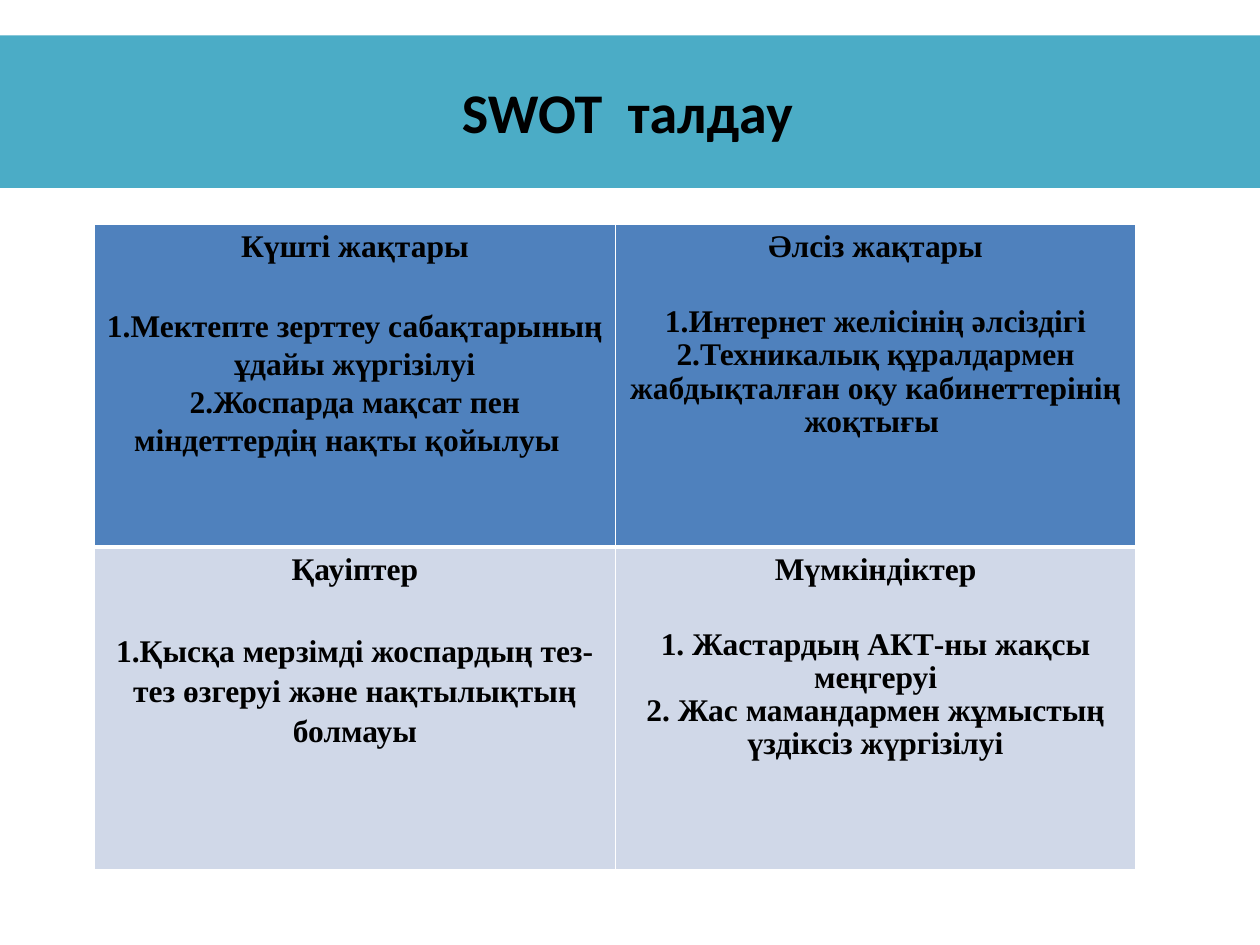
from lxml import etree
from pptx import Presentation
from pptx.dml.color import RGBColor
from pptx.enum.shapes import MSO_SHAPE
from pptx.enum.text import MSO_ANCHOR, PP_ALIGN
from pptx.oxml.ns import qn
from pptx.util import Pt

RECTANGLE = MSO_SHAPE.RECTANGLE
CENTER = PP_ALIGN.CENTER
MIDDLE = MSO_ANCHOR.MIDDLE

COLORS = {
    "banner": "4BACC6",
    "top": "4F81BD",
    "bottom": "D0D8E8",
    "border": "FFFFFF",
    "text": "000000",
}
TITLE_FONT = {"name": "Calibri", "size": Pt(32), "bold": True}
CELL_FONT = {"name": "Times New Roman", "size": Pt(18), "bold": True}
CELL_MARGINS = {
    "margin_left": Pt(5), "margin_right": Pt(5),
    "margin_top": 0, "margin_bottom": 0,
}
HEADING = {"alignment": CENTER, "line_spacing": 1.15, "space_after": Pt(23.8)}

# Each quadrant: heading, line spacing of the points, points
QUADRANTS = [
    [
        ("Күшті жақтары", 1.09, [
            "1.Мектепте зерттеу сабақтарының ұдайы жүргізілуі",
            "2.Жоспарда мақсат пен міндеттердің нақты қойылуы  ",
        ]),
        ("Әлсіз жақтары", 0.95, [
            "1.Интернет желісінің әлсіздігі 2.Техникалық құралдармен "
            "жабдықталған оқу кабинеттерінің жоқтығы ",
        ]),
    ],
    [
        ("Қауіптер", 1.15, [
            "1.Қысқа мерзімді жоспардың тез-тез өзгеруі және "
            "нақтылықтың болмауы",
        ]),
        ("Мүмкіндіктер", 0.95, [
            "1. Жастардың АКТ-ны жақсы меңгеруі",
            "2. Жас мамандармен жұмыстың үздіксіз жүргізілуі",
        ]),
    ],
]
ROW_FILLS = ["top", "bottom"]
ROW_BOTTOM_BORDERS = [3, 1]


def color(key):
    return RGBColor.from_string(COLORS[key])


def apply(target, values):
    for name, value in values.items():
        setattr(target, name, value)


def fill_solid(target, key):
    target.fill.solid()
    target.fill.fore_color.rgb = color(key)


def write(para, text, font, layout):
    apply(para, layout)
    span = para.add_run()
    span.text = text
    apply(span.font, font)
    span.font.color.rgb = color("text")


def add_banner(page, text):
    box = page.shapes.add_shape(RECTANGLE, Pt(-2.9), Pt(20.2), Pt(722.9), Pt(87.1))
    box.shadow.inherit = False
    fill_solid(box, "banner")
    box.line.fill.background()
    box.text_frame.vertical_anchor = MIDDLE
    write(box.text_frame.paragraphs[0], text, TITLE_FONT, {"alignment": CENTER})


def set_borders(cell, bottom):
    properties = cell._tc.get_or_add_tcPr()
    widths = {"a:lnL": 1, "a:lnR": 1, "a:lnT": 1, "a:lnB": bottom}
    for index, (tag, width) in enumerate(widths.items()):
        line = etree.Element(qn(tag), w=str(Pt(width)))
        solid = etree.SubElement(line, qn("a:solidFill"))
        etree.SubElement(solid, qn("a:srgbClr"), val=COLORS["border"])
        properties.insert(index, line)


def fill_cell(cell, heading, spacing, points):
    apply(cell, CELL_MARGINS)
    frame = cell.text_frame
    write(frame.paragraphs[0], heading, CELL_FONT, HEADING)
    for point in points:
        layout = {"alignment": CENTER, "line_spacing": spacing}
        write(frame.add_paragraph(), point, CELL_FONT, layout)


def add_swot_table(page):
    table = page.shapes.add_table(
        2, 2, Pt(54), Pt(128.3), Pt(595.2), Pt(368.6)).table
    apply(table, {"first_row": False, "horz_banding": False})
    for row, quadrants in enumerate(QUADRANTS):
        for column, quadrant in enumerate(quadrants):
            cell = table.cell(row, column)
            fill_cell(cell, *quadrant)
            fill_solid(cell, ROW_FILLS[row])
            set_borders(cell, ROW_BOTTOM_BORDERS[row])


def main():
    deck = Presentation()
    deck.slide_width, deck.slide_height = Pt(720), Pt(540)
    page = deck.slides.add_slide(deck.slide_layouts[6])

    # Title banner
    add_banner(page, "SWOT  талдау")

    # Four quadrants
    add_swot_table(page)

    deck.save("out.pptx")


if __name__ == "__main__":
    main()
